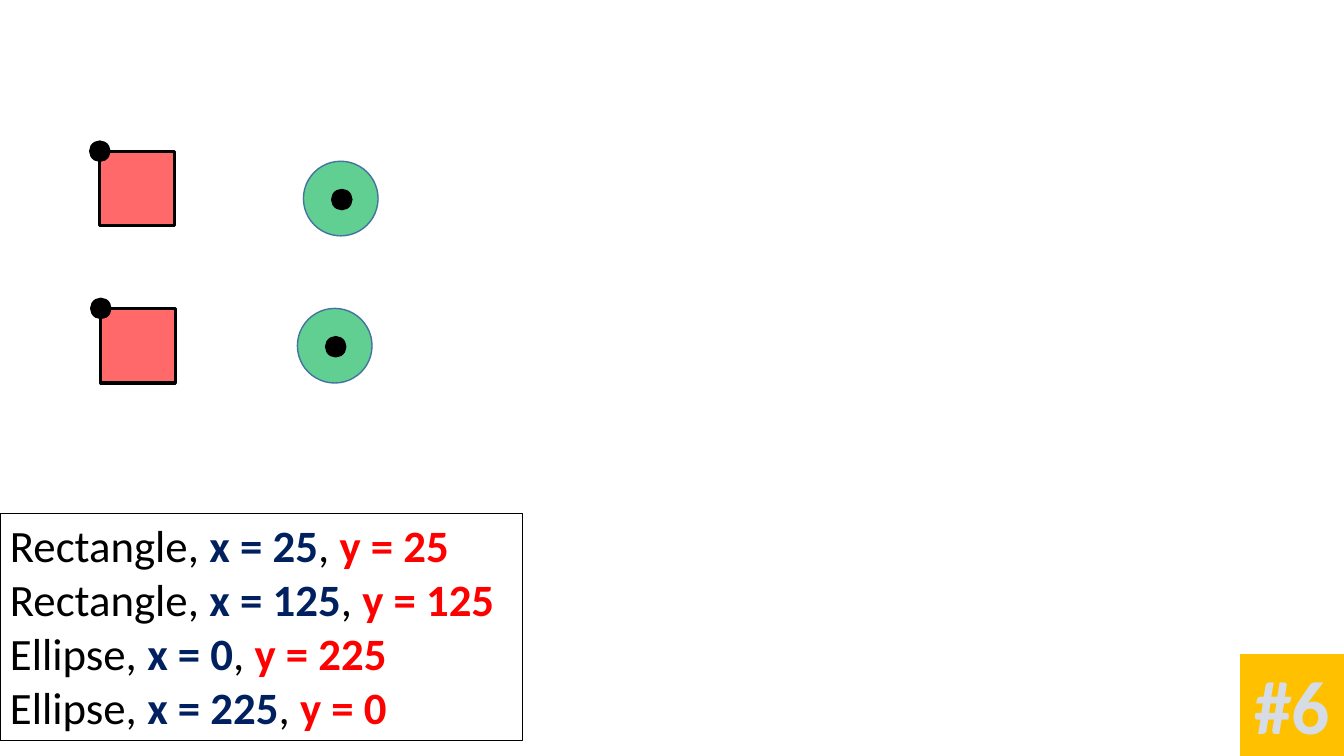
"""Build the slide of two rectangles and two ellipses with their coordinates."""
from lxml.etree import SubElement
from pptx import Presentation
from pptx.dml.color import RGBColor
from pptx.enum.shapes import MSO_SHAPE
from pptx.enum.text import MSO_AUTO_SIZE, PP_ALIGN
from pptx.oxml.ns import qn
from pptx.util import Inches, Pt

BLACK = RGBColor(0, 0, 0)
NAVY = RGBColor(0x00, 0x20, 0x60)
RED = RGBColor(0xFF, 0, 0)
GREEN = RGBColor(0x00, 0xB0, 0x50)
STEEL = RGBColor(0x43, 0x73, 0x9E)
AMBER = RGBColor(0xFF, 0xC0, 0x00)
PALE = RGBColor(0xD6, 0xDC, 0xE5)

COORDINATES = [
    ("Rectangle", 25, 25),
    ("Rectangle", 125, 125),
    ("Ellipse", 0, 225),
    ("Ellipse", 225, 0),
]
FIGURE_SIZE, DOT_SIZE = 0.74, 0.2
STYLES = {
    "Rectangle": (MSO_SHAPE.RECTANGLE, RED, 59, BLACK, 2.25, 0),
    "Ellipse": (MSO_SHAPE.OVAL, GREEN, 62, STEEL, 1, FIGURE_SIZE / 2 + 0.01),
}
FIGURES = [
    ("Rectangle", 1, 3.06),
    ("Ellipse", 2.95, 3.06),
    ("Rectangle", 0.99, 1.5),
    ("Ellipse", 3.01, 1.6),
]
SLIDE_WIDTH, SLIDE_HEIGHT = 13.33, 7.5
BADGE_WIDTH, BADGE_HEIGHT = 1.03, 1.01


def add_figure(shapes, preset, left, top, size, fill, opacity, outline, weight):
    figure = shapes.add_shape(preset, *map(Inches, (left, top, size, size)))
    figure.shadow.inherit = False
    figure.fill.solid()
    figure.fill.fore_color.rgb = fill
    if opacity < 100:
        color = figure.fill._xPr.find(qn("a:solidFill"))[0]
        SubElement(color, qn("a:alpha")).set("val", str(opacity * 1000))
    figure.line.color.rgb = outline
    figure.line.width = Pt(weight)


def add_run(paragraph, words, size, color, bold):
    run = paragraph.add_run()
    run.text = words
    run.font.name = "Calibri"
    run.font.size = Pt(size)
    run.font.bold = bold
    run.font.color.rgb = color


def add_box(slide, left, top, width, height):
    box = slide.shapes.add_textbox(*map(Inches, (left, top, width, height)))
    box.text_frame.word_wrap = True
    box.text_frame.auto_size = MSO_AUTO_SIZE.SHAPE_TO_FIT_TEXT
    return box


def main():
    deck = Presentation()
    deck.slide_width, deck.slide_height = Inches(SLIDE_WIDTH), Inches(SLIDE_HEIGHT)
    slide = deck.slides.add_slide(deck.slide_layouts[6])

    legend = add_box(slide, 0, 5.09, 5.18, 2.26)
    legend.line.color.rgb = BLACK
    legend.line.width = Pt(0.75)
    for index, (kind, x, y) in enumerate(COORDINATES):
        frame = legend.text_frame
        entry = frame.add_paragraph() if index else frame.paragraphs[0]
        add_run(entry, f"{kind}, ", 32, BLACK, False)
        add_run(entry, f"x = {x}", 32, NAVY, True)
        add_run(entry, ", ", 32, BLACK, False)
        add_run(entry, f"y = {y}", 32, RED, True)

    for kind, left, top in FIGURES:
        preset, fill, opacity, outline, weight, anchor = STYLES[kind]
        group = slide.shapes.add_group_shape()
        add_figure(group.shapes, preset, left, top, FIGURE_SIZE, fill, opacity, outline, weight)
        offset = anchor - DOT_SIZE / 2
        add_figure(group.shapes, MSO_SHAPE.OVAL, left + offset, top + offset, DOT_SIZE,
                   BLACK, 100, BLACK, 1)

    badge = add_box(slide, SLIDE_WIDTH - BADGE_WIDTH, SLIDE_HEIGHT - BADGE_HEIGHT,
                    BADGE_WIDTH, BADGE_HEIGHT)
    badge.fill.solid()
    badge.fill.fore_color.rgb = AMBER
    number = badge.text_frame.paragraphs[0]
    number.alignment = PP_ALIGN.CENTER
    add_run(number, "#6", 54, PALE, True)

    deck.save("out.pptx")


if __name__ == "__main__":
    main()
